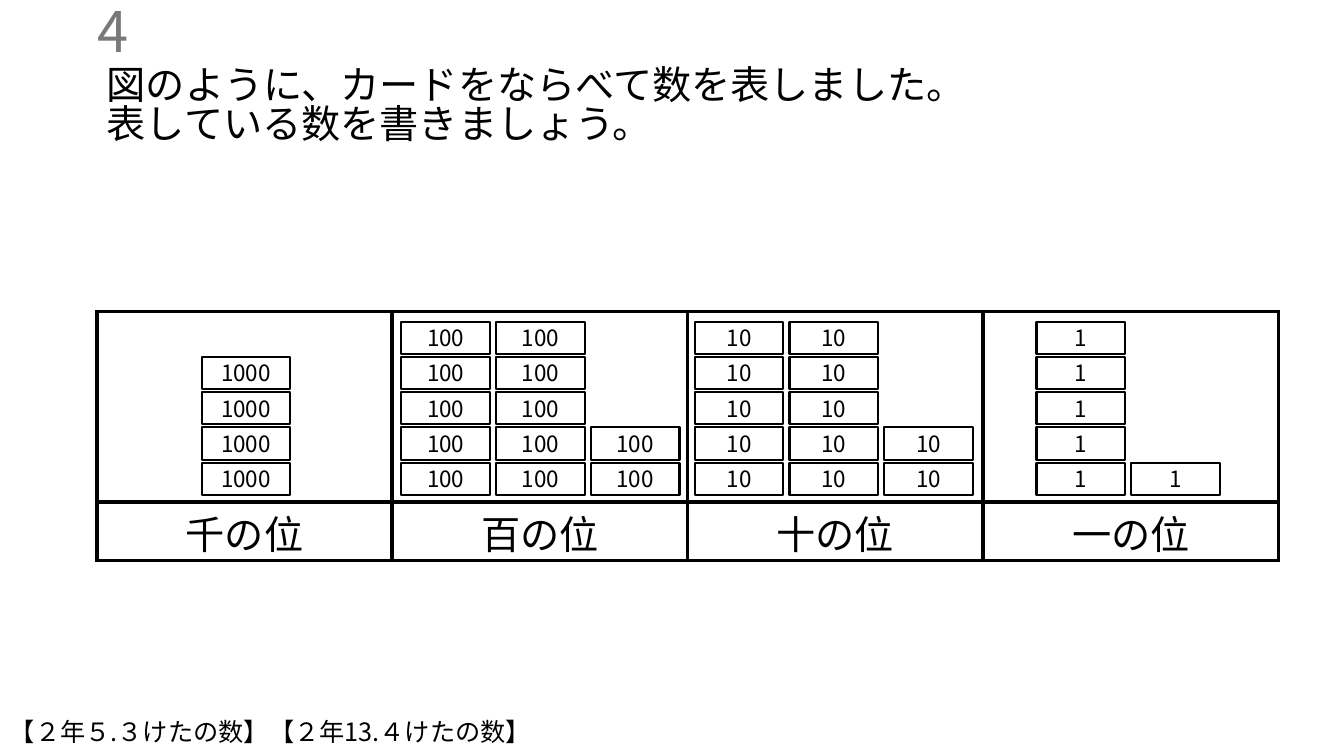
"""Build a place-value slide with number cards stacked above a table."""
from lxml import etree
from pptx import Presentation
from pptx.dml.color import RGBColor
from pptx.enum.shapes import MSO_SHAPE
from pptx.enum.text import MSO_ANCHOR, PP_ALIGN
from pptx.oxml.ns import qn
from pptx.util import Pt

QUESTION = ["図のように、カードをならべて数を表しました。", "表している数を書きましょう。"]
NUMBER = "4"
UNITS = ["【２年５.３けたの数】【２年13.４けたの数】"]
PLACES = [
    {"name": "千の位", "card": "1000", "left": 200, "stacks": [4]},
    {"name": "百の位", "card": "100", "left": 398, "stacks": [5, 5, 2]},
    {"name": "十の位", "card": "10", "left": 689, "stacks": [5, 5, 2]},
    {"name": "一の位", "card": "1", "left": 1028, "stacks": [5, 1]},
]
COLORS = {"ink": "000000", "number": "797979"}
FONT = "Noto Sans CJK JP"

LEFT, CENTER, RIGHT = PP_ALIGN.LEFT, PP_ALIGN.CENTER, PP_ALIGN.RIGHT
TOP, MIDDLE, BOTTOM = MSO_ANCHOR.TOP, MSO_ANCHOR.MIDDLE, MSO_ANCHOR.BOTTOM
RECT = MSO_SHAPE.RECTANGLE

TABLE_LEFT, TABLE_TOP, COLUMN_W = 96, 309, 293
ROW_HEIGHTS = [189, 58]
CARD_W, CARD_H, CARD_STEP_X, CARD_STEP_Y = 88, 32, 94, 35
CARD_BOTTOM_ROW = 459


def px(n):
    return n * 9144


def rgb(name):
    return RGBColor.from_string(COLORS[name])


def write(tf, lines, size, align=LEFT, color="ink", spacing=None):
    for i, line in enumerate(lines):
        p = tf.paragraphs[0] if i == 0 else tf.add_paragraph()
        p.text = line
        p.alignment = align
        if spacing:
            p.line_spacing = spacing
        p.font.size = Pt(size)
        p.font.name = FONT
        p.font.color.rgb = rgb(color)
        latin = next(p._p.iter(qn("a:latin")))
        latin.addnext(etree.Element(qn("a:ea"), typeface=FONT))


def place(sp, left, top, width, height):
    sp.left, sp.top, sp.width, sp.height = map(px, (left, top, width, height))


def set_frame(tf, anchor, margin_top=5):
    tf.word_wrap = True
    tf.vertical_anchor = anchor
    tf.margin_left = tf.margin_right = px(10)
    tf.margin_top, tf.margin_bottom = px(margin_top), px(5)


def add_text(slide, box, lines, size, anchor, margin_top=5, **style):
    sp = slide.shapes.add_textbox(*map(px, box))
    set_frame(sp.text_frame, anchor, margin_top)
    write(sp.text_frame, lines, size, **style)


def add_borders(cell):
    tc_pr = cell._tc.get_or_add_tcPr()
    for side in ("lnL", "lnR", "lnT", "lnB"):
        ln = etree.SubElement(tc_pr, qn(f"a:{side}"), w=str(Pt(3)))
        fill = etree.SubElement(ln, qn("a:solidFill"))
        etree.SubElement(fill, qn("a:srgbClr"), val=COLORS["ink"])


def add_place_table(slide):
    frame = slide.shapes.add_table(
        len(ROW_HEIGHTS), len(PLACES), px(TABLE_LEFT), px(TABLE_TOP),
        px(COLUMN_W * len(PLACES)), px(sum(ROW_HEIGHTS)))
    table = frame.table
    table.first_row = table.horz_banding = False
    for column in table.columns:
        column.width = px(COLUMN_W)
    for row, height in zip(table.rows, ROW_HEIGHTS):
        row.height = px(height)
    for cell in table.iter_cells():
        add_borders(cell)
        cell.fill.background()
    for column, info in enumerate(PLACES):
        cell = table.cell(1, column)
        cell.margin_top = cell.margin_bottom = 0
        cell.vertical_anchor = BOTTOM
        write(cell.text_frame, [info["name"]], 28, CENTER)


def add_card(slide, text, left, top):
    sp = slide.shapes.add_shape(RECT, *map(px, (left, top, CARD_W, CARD_H)))
    sp.shadow.inherit = False
    sp.fill.background()
    sp.line.color.rgb = rgb("ink")
    sp.line.width = Pt(1.5)
    tf = sp.text_frame
    tf.margin_left = tf.margin_right = tf.margin_top = tf.margin_bottom = 0
    tf.vertical_anchor = MIDDLE
    write(tf, [text], 16, CENTER)


def main():
    prs = Presentation()
    prs.slide_width, prs.slide_height = px(1333), px(750)
    slide = prs.slides.add_slide(prs.slide_layouts[5])

    title = slide.shapes.title
    place(title, 96, 59, 1153, 104)
    set_frame(title.text_frame, TOP, margin_top=9)
    write(title.text_frame, QUESTION, 28, spacing=0.83)

    add_text(slide, (-163, 10, 300, 40), [NUMBER], 40, MIDDLE,
             align=RIGHT, color="number")
    add_place_table(slide)
    for info in PLACES:
        for column, count in enumerate(info["stacks"]):
            for level in range(count):
                add_card(slide, info["card"],
                         info["left"] + column * CARD_STEP_X,
                         CARD_BOTTOM_ROW - level * CARD_STEP_Y)
    add_text(slide, (0, 710, 749, 40), UNITS, 18, TOP, margin_top=1)
    prs.save("out.pptx")


if __name__ == "__main__":
    main()
